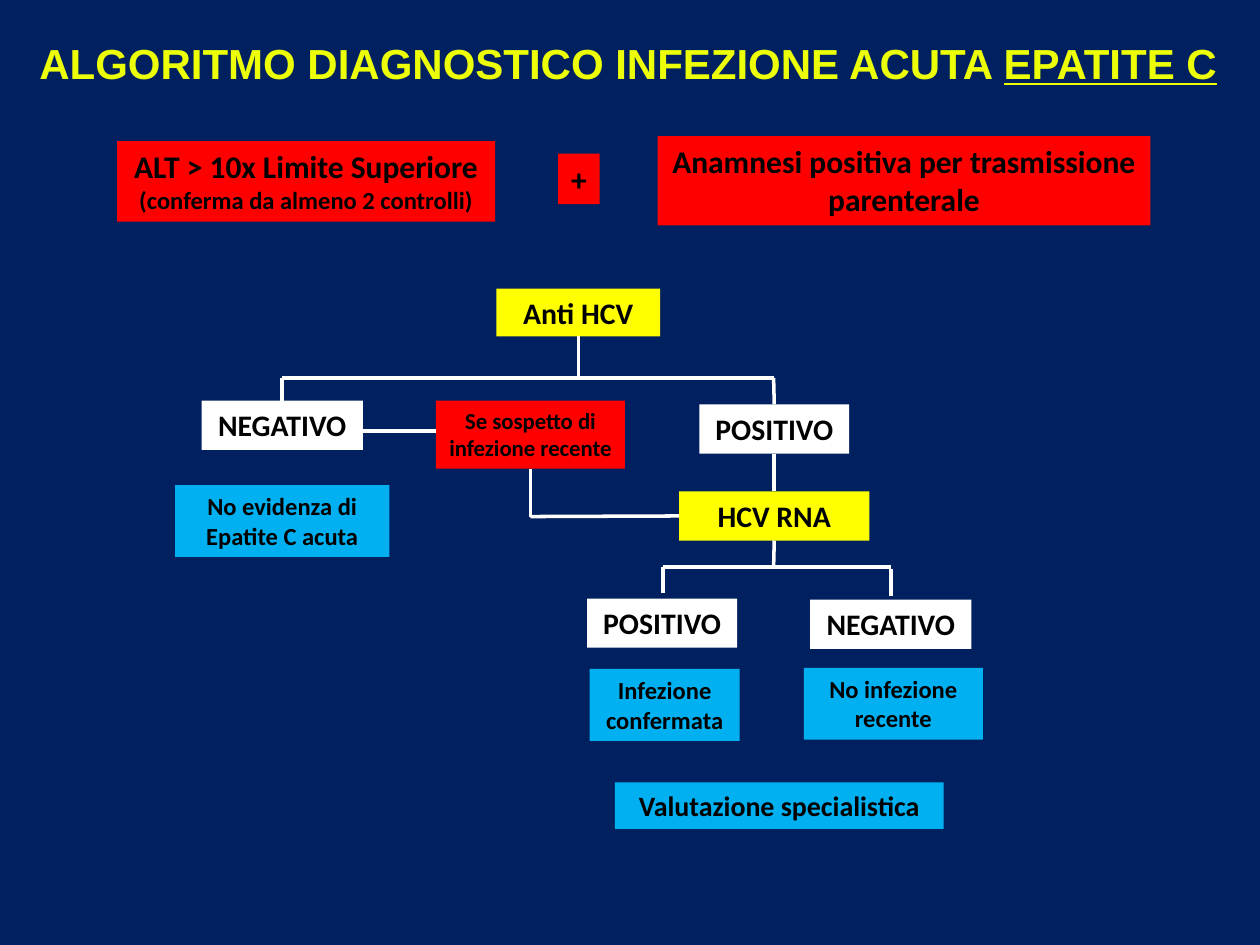
from lxml import etree
from pptx import Presentation
from pptx.dml.color import RGBColor
from pptx.enum import shapes, text
from pptx.oxml.ns import qn
from pptx.util import Inches, Pt

HUES = {"navy": "002060", "lime": "EDFF07", "red": "FF0000", "yellow": "FFFF00",
        "white": "FFFFFF", "blue": "00B0F0", "black": "000000"}

TITLE = [("ALGORITMO DIAGNOSTICO INFEZIONE ACUTA ", False), ("EPATITE C", True)]

# name: (left, top, width, height), fill, [(text, size), ...]
BOXES = {
    "alt": ((0.93, 1.12, 3, 0.64), "red",
            [("ALT > 10x Limite Superiore", 18), ("(conferma da almeno 2 controlli)", 14)]),
    "plus": ((4.43, 1.22, 0.33, 0.4), "red", [("+", 18)]),
    "history": ((5.22, 1.08, 3.91, 0.71), "red",
                [("Anamnesi positiva per trasmissione parenterale", 18)]),
    "anti": ((3.94, 2.29, 1.3, 0.38), "yellow", [("Anti HCV", 17)]),
    "anti neg": ((1.6, 3.18, 1.28, 0.39), "white", [("NEGATIVO", 17)]),
    "suspect": ((3.46, 3.18, 1.5, 0.54), "red", [("Se sospetto di infezione recente", 13)]),
    "anti pos": ((5.55, 3.21, 1.19, 0.39), "white", [("POSITIVO", 17)]),
    "no acute": ((1.39, 3.85, 1.7, 0.57), "blue", [("No evidenza di Epatite C acuta", 14)]),
    "rna": ((5.39, 3.9, 1.51, 0.39), "yellow", [("HCV RNA", 17)]),
    "rna pos": ((4.66, 4.75, 1.19, 0.39), "white", [("POSITIVO", 17)]),
    "rna neg": ((6.43, 4.76, 1.28, 0.39), "white", [("NEGATIVO", 17)]),
    "confirmed": ((4.68, 5.31, 1.19, 0.57), "blue", [("Infezione confermata", 14)]),
    "not recent": ((6.38, 5.3, 1.42, 0.57), "blue", [("No infezione recente", 14)]),
    "expert": ((4.88, 6.21, 2.61, 0.37), "blue", [("Valutazione specialistica", 16)]),
}

# Each end is a point (x, y) or a box side (name, side)
TOP, LEFT, BOTTOM, RIGHT = range(4)
LINES = [
    (("anti", BOTTOM), (4.59, 3)),
    ((2.24, 3), (6.14, 3)),
    ((2.24, 3), ("anti neg", TOP)),
    ((6.14, 3), ("anti pos", TOP)),
    ((2.87, 3.42), (3.46, 3.42)),
    (("anti pos", BOTTOM), ("rna", TOP)),
    (("suspect", BOTTOM), (4.21, 4.1)),
    ((4.21, 4.1), ("rna", LEFT)),
    (("rna", BOTTOM), (6.14, 4.5)),
    ((5.26, 4.5), (7.07, 4.5)),
    ((5.26, 4.5), (5.26, 4.71)),
    ((7.07, 4.52), (7.07, 4.73)),
]


def hue(name):
    return RGBColor.from_string(HUES[name])


def style(par, face, size, color):
    par.alignment = text.PP_ALIGN.CENTER
    font = par.font
    font.name, font.size, font.bold = face, Pt(size), True
    font.color.rgb = hue(color)


def add_title(slide):
    title = slide.shapes.title
    title.left, title.top, title.width, title.height = map(Inches, (0.12, 0.29, 9.73, 0.46))
    frame = title.text_frame
    frame.auto_size = text.MSO_AUTO_SIZE.NONE
    frame.vertical_anchor = text.MSO_ANCHOR.MIDDLE
    par = frame.paragraphs[0]
    style(par, "Arial", 24, "lime")
    par.line_spacing = 0.9
    for words, under in TITLE:
        run = par.add_run()
        run.text = words
        if under:
            run.font.underline = True


def add_box(slide, place, fill, rows):
    box = slide.shapes.add_shape(shapes.MSO_SHAPE.RECTANGLE, *map(Inches, place))
    box.shadow.inherit = False
    box.fill.solid()
    box.fill.fore_color.rgb = hue(fill)
    box.line.fill.background()
    frame = box.text_frame
    frame.word_wrap = True
    frame.auto_size = text.MSO_AUTO_SIZE.SHAPE_TO_FIT_TEXT
    frame.vertical_anchor = text.MSO_ANCHOR.TOP
    for i, (words, size) in enumerate(rows):
        par = frame.add_paragraph() if i else frame.paragraphs[0]
        par.text = words
        style(par, "Calibri", size, "black")
    return box


def add_line(slide, ends, boxes):
    points = [(0, 0) if end[0] in boxes else end for end in ends]
    line = slide.shapes.add_connector(
        shapes.MSO_CONNECTOR.STRAIGHT, *(Inches(v) for point in points for v in point))
    for end, join in zip(ends, (line.begin_connect, line.end_connect)):
        if end[0] in boxes:
            join(boxes[end[0]], end[1])
    line.line.color.rgb = hue("white")
    line.line.width = Pt(2)
    etree.SubElement(line._element.spPr, qn("a:effectLst"))


def main():
    deck = Presentation()
    deck.slide_width, deck.slide_height = Inches(10), Inches(7.5)
    slide = deck.slides.add_slide(deck.slide_layouts[5])
    back = slide.background.fill
    back.solid()
    back.fore_color.rgb = hue("navy")
    add_title(slide)
    boxes = {name: add_box(slide, *parts) for name, parts in BOXES.items()}
    for ends in LINES:
        add_line(slide, ends, boxes)
    deck.save("out.pptx")


if __name__ == "__main__":
    main()
